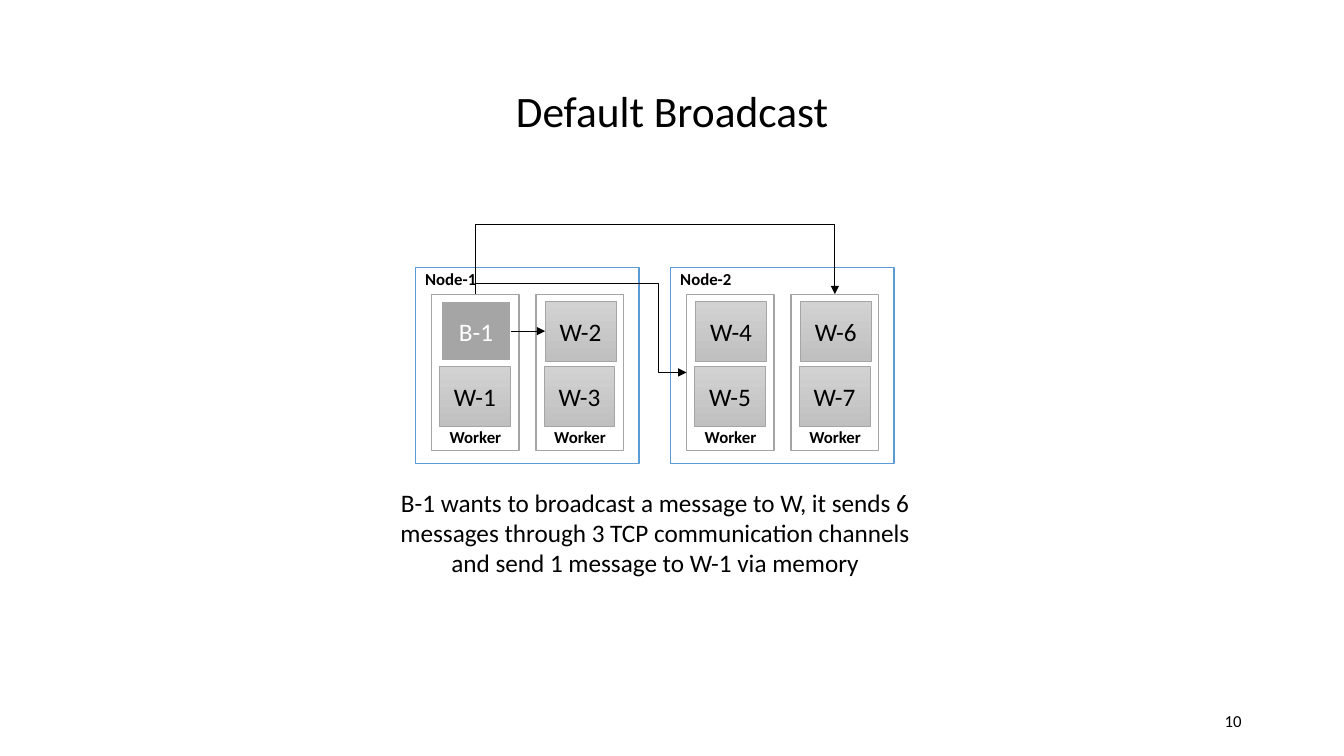
import pptx
import pptx.util
import pptx.dml.color
import pptx.enum.shapes
import pptx.enum.text
import pptx.oxml
import pptx.oxml.ns

Pt = pptx.util.Pt
RGBColor = pptx.dml.color.RGBColor
ALIGN = pptx.enum.text.PP_ALIGN
ANCHOR = pptx.enum.text.MSO_ANCHOR
CONNECTOR = pptx.enum.shapes.MSO_CONNECTOR
RECTANGLE = pptx.enum.shapes.MSO_SHAPE.RECTANGLE
qn = pptx.oxml.ns.qn

BLACK = RGBColor(0x00, 0x00, 0x00)
WHITE = RGBColor(0xFF, 0xFF, 0xFF)
BLUE = RGBColor(0x5B, 0x9B, 0xD5)
GRAY = RGBColor(0xA5, 0xA5, 0xA5)
LIGHT_GRAY = RGBColor(0xD2, 0xD2, 0xD2)
MID_GRAY = RGBColor(0xC0, 0xC0, 0xC0)

FONT = "Calibri"
WORKER_PITCH = 74.7
WORKER_SIZE = (62.6, 111.6)
TASK_SIZE = (50.6, 42.6)
LABEL_SIZE = (51.8, 21.8)
NODES = [
    ("Node-1", 296.6, [("B-1", "W-1"), ("W-2", "W-3")]),
    ("Node-2", 478.8, [("W-4", "W-5"), ("W-6", "W-7")]),
]


def write_text(shape, text, size=18, color=BLACK, bold=False, align=ALIGN.CENTER,
               anchor=ANCHOR.MIDDLE, wrap=True, line_spacing=None):
    frame = shape.text_frame
    frame.word_wrap = wrap
    frame.vertical_anchor = anchor
    paragraph = frame.paragraphs[0]
    paragraph.alignment = align
    paragraph.line_spacing = line_spacing
    run = paragraph.add_run()
    run.text = text
    run.font.name = FONT
    run.font.size = Pt(size)
    run.font.bold = bold
    run.font.color.rgb = color


def add_text(slide, left, top, width, height, text, **text_format):
    box = slide.shapes.add_textbox(Pt(left), Pt(top), Pt(width), Pt(height))
    write_text(box, text, **text_format)


def add_label(slide, left, top, text):
    add_text(slide, left, top, *LABEL_SIZE, text, size=12, bold=True,
             align=ALIGN.LEFT, anchor=ANCHOR.TOP, wrap=False)


def add_rectangle(slide, left, top, width, height, fill, line, line_width):
    shape = slide.shapes.add_shape(RECTANGLE, Pt(left), Pt(top), Pt(width), Pt(height))
    shape.shadow.inherit = False
    shape.fill.solid()
    shape.fill.fore_color.rgb = fill
    shape.line.color.rgb = line
    shape.line.width = Pt(line_width)
    return shape


def add_task(slide, left, top, name):
    """Draw a broadcaster (B) in flat gray, any other task with a gradient."""
    if name.startswith("B"):
        task = add_rectangle(slide, left, top, *TASK_SIZE, GRAY, WHITE, 1.5)
        write_text(task, name, color=WHITE)
        return task
    task = add_rectangle(slide, left, top, *TASK_SIZE, LIGHT_GRAY, GRAY, 0.5)
    task.fill.gradient()
    task.fill.gradient_angle = 270
    for stop, color in zip(task.fill.gradient_stops, (LIGHT_GRAY, MID_GRAY)):
        stop.color.rgb = color
    write_text(task, name)
    return task


def add_worker(slide, left, top, upper, lower):
    """Draw a worker and return its frame and its upper task."""
    frame = add_rectangle(slide, left, top, *WORKER_SIZE, WHITE, GRAY, 1)
    add_task(slide, left + 5.8, top + 51.8, lower)
    add_label(slide, left + 6, top + 91.4, "Worker")
    return frame, add_task(slide, left + 6.6, top + 5, upper)


def add_node(slide, left, top, name, workers):
    add_rectangle(slide, left, top, 159.8, 139.7, WHITE, BLUE, 1)
    add_label(slide, left, top - 2.9, name)
    return [add_worker(slide, left + 11.5 + column * WORKER_PITCH, top + 18.9, *tasks)
            for column, tasks in enumerate(workers)]


def add_arrow(slide, kind, source, source_side, target, target_side):
    arrow = slide.shapes.add_connector(kind, 0, 0, 0, 0)
    arrow.begin_connect(source, source_side)
    arrow.end_connect(target, target_side)
    arrow.line.color.rgb = BLACK
    arrow.line.width = Pt(0.5)
    line = arrow.line._get_or_add_ln()
    line.append(pptx.oxml.parse_xml(
        f'<a:tailEnd {pptx.oxml.ns.nsdecls("a")} type="triangle"/>'))
    properties = arrow._element.spPr
    properties.append(pptx.oxml.parse_xml(f'<a:effectLst {pptx.oxml.ns.nsdecls("a")}/>'))
    return arrow


def bend(arrow, preset, start, end, depth, transform, adjustments):
    """Turn an elbow a quarter; depth is its vertical extent before turning."""
    span = end[0] - start[0]
    arrow.left = Pt((start[0] + end[0] - depth) / 2)
    arrow.top = Pt((start[1] + end[1] - span) / 2)
    arrow.width, arrow.height = Pt(depth), Pt(span)
    frame = arrow._element.spPr.find(qn("a:xfrm"))
    for name in ("flipH", "flipV", "rot"):
        frame.attrib.pop(name, None)
    for name, value in transform.items():
        frame.set(name, value)
    geometry = arrow._element.spPr.find(qn("a:prstGeom"))
    geometry.set("prst", preset)
    guides = geometry.find(qn("a:avLst"))
    for number, ratio in enumerate(adjustments, 1):
        guide = guides.makeelement(qn("a:gd"), {
            "name": f"adj{number}", "fmla": f"val {round(ratio * 100000)}"})
        guides.append(guide)


def add_messages(slide, workers):
    """Draw the three TCP channels that leave the first worker."""
    (first, broadcaster), (_, second_task), (third, _), (fourth, _) = workers
    add_arrow(slide, CONNECTOR.STRAIGHT, broadcaster, 3, second_task, 1)

    start = (first.left.pt + first.width.pt / 2, first.top.pt)
    side = (third.left.pt, third.top.pt + third.height.pt / 2)
    depth = side[1] - start[1]
    arrow = add_arrow(slide, CONNECTOR.ELBOW, first, 0, third, 1)
    bend(arrow, "bentConnector4", start, side, depth,
         {"rot": "16200000", "flipH": "1"}, (-8 / depth, 0.865))

    top = (fourth.left.pt + fourth.width.pt / 2, fourth.top.pt)
    depth = 0.1
    arrow = add_arrow(slide, CONNECTOR.ELBOW, first, 0, fourth, 0)
    bend(arrow, "bentConnector3", start, top, depth,
         {"rot": "5400000", "flipH": "1", "flipV": "1"}, (43.9 / depth,))


def add_diagram(slide, top):
    workers = []
    for name, left, tasks in NODES:
        workers += add_node(slide, left, top, name, tasks)
    add_messages(slide, workers)


def main():
    presentation = pptx.Presentation()
    presentation.slide_width, presentation.slide_height = Pt(960), Pt(540)
    slide = presentation.slides.add_slide(presentation.slide_layouts[6])
    add_text(slide, 66, 28.8, 828, 104.4, "Default Broadcast", size=31, line_spacing=0.9)
    add_text(slide, 678, 500.5, 216, 28.8, "10", size=12, align=ALIGN.RIGHT)
    add_diagram(slide, 191.3)
    add_text(slide, 273.6, 344.2, 388.8, 72.7,
             "B-1 wants to broadcast a message to W, it sends 6 messages through 3 TCP "
             "communication channels and send 1 message to W-1 via memory",
             anchor=ANCHOR.TOP)
    presentation.save("out.pptx")


if __name__ == "__main__":
    main()
